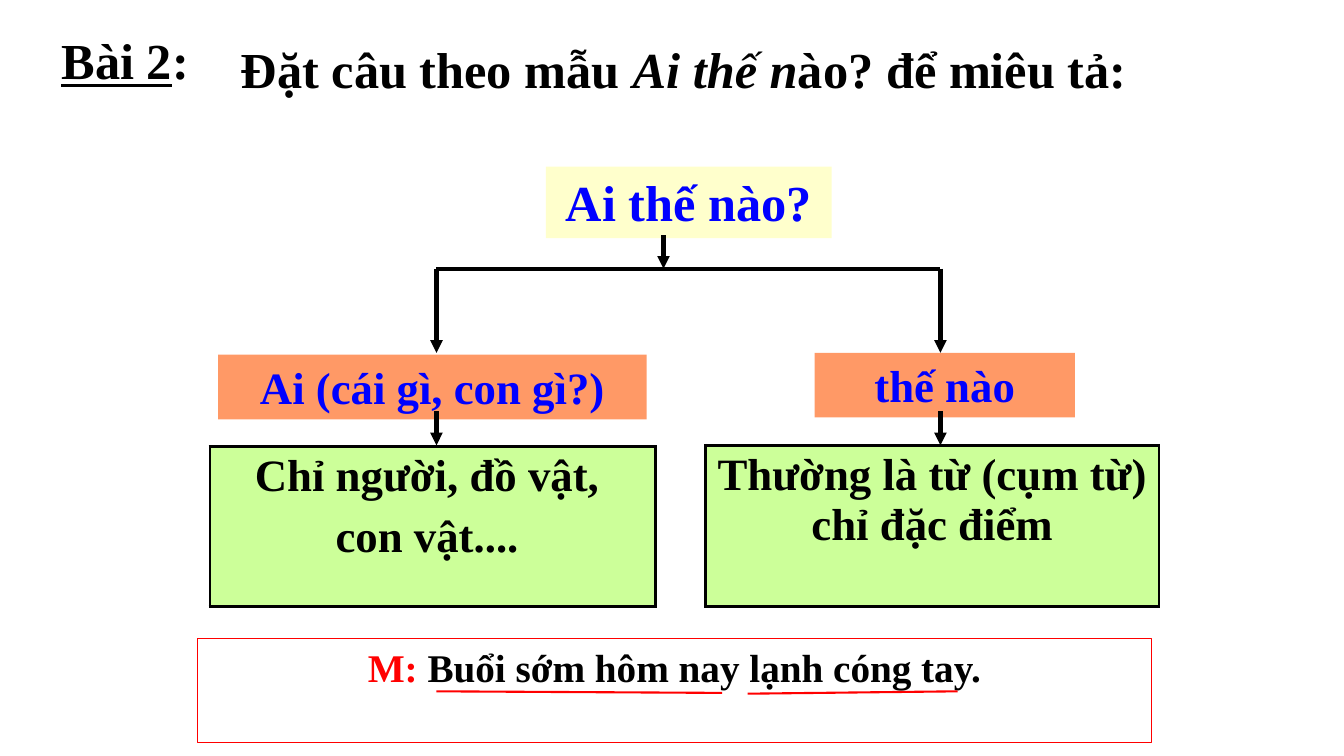
import pptx
import pptx.dml.color
import pptx.enum.shapes
import pptx.enum.text
import pptx.oxml
import pptx.oxml.ns
import pptx.util
from pptx.util import Cm

BLACK, BLUE, RED = "000000", "0000FF", "FF0000"
YELLOW, ORANGE, GREEN = "FFFFCC", "FF9966", "CCFF99"
CENTER = pptx.enum.text.PP_ALIGN.CENTER
LEFT = pptx.enum.text.PP_ALIGN.LEFT


def color(value):
    return pptx.dml.color.RGBColor.from_string(value)


def element(markup):
    return pptx.oxml.parse_xml(markup.replace(">", " %s>" % pptx.oxml.ns.nsdecls("a"), 1))


class Lesson:
    """Holds the text style and the slide being drawn."""

    font_name = "Times New Roman"
    border = 2.25

    def __init__(self, presentation):
        self.slide = presentation.slides.add_slide(presentation.slide_layouts[6])

    def set_text(self, frame, paragraphs, size, align=CENTER, space=0):
        """Each paragraph is a list of (text, colour, format values)."""
        frame.word_wrap = True
        for index, runs in enumerate(paragraphs):
            paragraph = frame.add_paragraph() if index else frame.paragraphs[0]
            paragraph.alignment = align
            if index:
                paragraph.space_before = pptx.util.Pt(space)
            for text, text_color, extra in runs:
                run = paragraph.add_run()
                run.text = text
                values = {"name": self.font_name, "size": pptx.util.Pt(size), "bold": True, **extra}
                for name, value in values.items():
                    setattr(run.font, name, value)
                run.font.color.rgb = color(text_color)

    def text(self, place, runs, size):
        shape = self.slide.shapes.add_textbox(*map(Cm, place))
        self.set_text(shape.text_frame, [runs], size, LEFT)

    def box(self, place, runs, size, fill=None, line=None):
        kind = pptx.enum.shapes.MSO_SHAPE.RECTANGLE
        shape = self.slide.shapes.add_shape(kind, *map(Cm, place))
        shape.shadow.inherit = False
        if fill:
            shape.fill.solid()
            shape.fill.fore_color.rgb = color(fill)
        else:
            shape.fill.background()
        if line:
            shape.line.color.rgb = color(line)
            shape.line.width = pptx.util.Pt(0.75)
        else:
            shape.line.fill.background()
        shape.text_frame.vertical_anchor = pptx.enum.text.MSO_ANCHOR.TOP
        self.set_text(shape.text_frame, [runs], size)

    def table(self, place, lines, size):
        table = self.slide.shapes.add_table(1, 1, *map(Cm, place)).table
        table.first_row = table.horz_banding = False
        cell = table.cell(0, 0)
        self.set_text(cell.text_frame, [[(line, BLACK, {})] for line in lines], size, space=8)
        properties = cell._tc.get_or_add_tcPr()
        for side in ("lnL", "lnR", "lnT", "lnB"):
            width = pptx.util.Pt(self.border)
            properties.append(element(
                f'<a:{side} w="{width}"><a:solidFill><a:srgbClr val="{BLACK}"/>'
                f'</a:solidFill></a:{side}>'))
        cell.fill.solid()
        cell.fill.fore_color.rgb = color(GREEN)

    def line(self, start, end, line_color=BLACK, width=3, arrow=False):
        kind = pptx.enum.shapes.MSO_CONNECTOR.STRAIGHT
        connector = self.slide.shapes.add_connector(kind, *map(Cm, start + end))
        connector.line.color.rgb = color(line_color)
        connector.line.width = pptx.util.Pt(width)
        if arrow:
            connector.line._get_or_add_ln().append(element('<a:tailEnd type="triangle"></a:tailEnd>'))
        connector._element.spPr.append(element("<a:effectLst></a:effectLst>"))


def main():
    presentation = pptx.Presentation()
    presentation.slide_width, presentation.slide_height = Cm(33.87), Cm(19.05)
    lesson = Lesson(presentation)
    branches = left, right = 11, 23.7
    stem, bar = 16.72, 6.77

    # Sentence pattern and its two parts
    lesson.line((left, bar), (right, bar))
    lesson.box((13.76, 4.2, 7.2, 1.8), [("Ai thế nào?", BLUE, {})], 36, YELLOW)
    lesson.box((5.5, 8.94, 10.8, 1.63), [("Ai (cái gì, con gì?)", BLUE, {})], 32, ORANGE)
    lesson.box((20.53, 8.89, 6.56, 1.63), [("thế nào", BLUE, {})], 32, ORANGE)

    # Explanations
    lesson.table((5.29, 11.26, 11.23, 4.02), ["Chỉ người, đồ vật, ", "con vật.... "], 32)
    lesson.table((17.78, 11.22, 11.43, 4.06), ["Thường là từ (cụm từ) chỉ đặc điểm"], 32)

    # Arrows
    lesson.line((stem, 5.93), (stem, bar), arrow=True)
    for top, bottom in ((bar, 8.89), (10.37, 11.22)):
        for x in branches:
            lesson.line((x, top), (x, bottom), arrow=True)

    # Heading
    lesson.text((1.3, 0.61, 6.1, 1.8),
                [("Bài 2", BLACK, {"underline": True}), (":", BLACK, {})], 36)
    lesson.text((5.5, 0.84, 28.04, 1.8),
                [(" Đặt câu theo mẫu ", BLACK, {}), ("Ai thế n", BLACK, {"italic": True}),
                 ("ào? để miêu tả:", BLACK, {})], 36)

    # Example with both parts underlined
    lesson.box((4.98, 16.08, 24.03, 2.64),
               [("M: ", RED, {}), ("Buổi sớm hôm nay lạnh cóng tay.", BLACK, {})], 28, line=RED)
    lesson.line((left, 17.42), (18.2, 17.46), RED, 1.5)
    lesson.line((18.84, 17.48), (24.13, 17.42), RED, 1.5)

    presentation.save("out.pptx")


if __name__ == "__main__":
    main()
